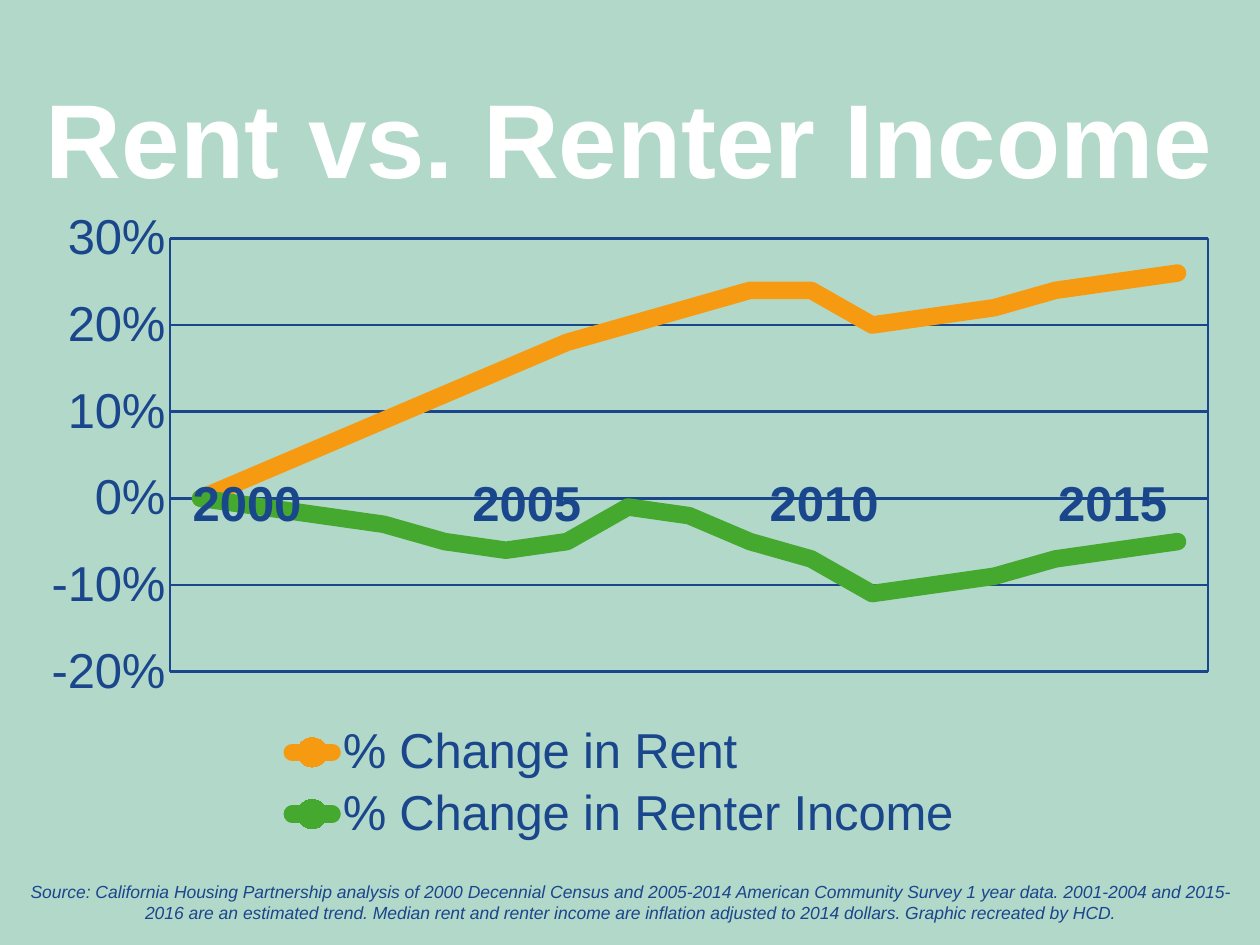
from lxml.etree import SubElement as Sub
from pptx import Presentation
from pptx.chart.data import CategoryChartData as Data
from pptx.dml.color import RGBColor as Rgb
from pptx.enum.chart import XL_CHART_TYPE as Kind, XL_LEGEND_POSITION as Spot
from pptx.enum.chart import XL_MARKER_STYLE as Mark, XL_TICK_MARK as Tick
from pptx.enum.text import MSO_ANCHOR as Anchor, MSO_AUTO_SIZE as Auto, PP_ALIGN as Align
from pptx.oxml import parse_xml
from pptx.oxml.ns import nsdecls, qn
from pptx.util import Inches, Pt

HUES = {"back": "B2D8CA", "navy": "1A468C", "rent": "F69B11",
        "pay": "44A92E", "white": "FFFFFF"}
RENT = [0, .03, .06, .09, .12, .15, .18, .2, .22, .24, .24, .2, .21, .22, .24, .25, .26]
PAY = [0, -.01, -.02, -.03, -.05, -.06, -.05, -.01, -.02, -.05, -.07, -.11, -.1,
       -.09, -.07, -.06, -.05]
LINES = [("% Change in Rent", RENT, "rent"), ("% Change in Renter Income", PAY, "pay")]
YEARS = {"2000": 1.43, "2005": 3.65, "2010": 6.01, "2015": 8.3}
NOTE = ("Source: California Housing Partnership analysis of 2000 Decennial Census and "
        "2005-2014 American Community Survey 1 year data. 2001-2004 and 2015-2016 are an "
        "estimated trend. Median rent and renter income are inflation adjusted to 2014 "
        "dollars. Graphic recreated by HCD.")


def hue(name):
    return Rgb.from_string(HUES[name])


class Deck:
    face = "Arial"

    def __init__(self):
        self.file = Presentation()
        self.file.slide_width, self.file.slide_height = Inches(10), Inches(7.5)
        self.slide = self.file.slides.add_slide(self.file.slide_layouts[5])
        fill = self.slide.background.fill
        fill.solid()
        fill.fore_color.rgb = hue("back")

    def style(self, font, size, name="navy", bold=False, italic=False):
        font.name, font.size, font.bold, font.italic = self.face, Pt(size), bold, italic
        font.color.rgb = hue(name)

    def title(self, text, box):
        shape = self.slide.shapes.title
        shape.left, shape.top, shape.width, shape.height = map(Inches, box)
        frame = shape.text_frame
        frame.text = text
        frame.auto_size, frame.vertical_anchor = Auto.NONE, Anchor.TOP
        frame.margin_left = frame.margin_right = frame.margin_bottom = 0
        frame.margin_top = Inches(.08)
        para = frame.paragraphs[0]
        para.alignment = Align.CENTER
        self.style(para.font, 60, "white", bold=True)

    def label(self, text, box, wrap):
        frame = self.slide.shapes.add_textbox(*map(Inches, box)).text_frame
        frame.text = text
        frame.word_wrap, frame.auto_size = wrap, Auto.SHAPE_TO_FIT_TEXT
        return frame.paragraphs[0]

    def note(self, text, box):
        para = self.label(text, box, True)
        para.alignment = Align.CENTER
        self.style(para.font, 10, italic=True)

    def year(self, text, box):
        run = self.label(text, box, False).runs[0]
        self.style(run.font, 28, bold=True)
        edge = parse_xml(f'<a:ln {nsdecls("a")} w="{Pt(1.5)}"><a:solidFill>'
                         f'<a:srgbClr val="{HUES["white"]}"/></a:solidFill></a:ln>')
        run._r.get_or_add_rPr().insert(0, edge)

    def place(self, part, box, inner=False):
        for old in part.findall(qn("c:layout")):
            part.remove(old)
        lay = parse_xml(f'<c:layout {nsdecls("c")}/>')
        spot = Sub(lay, qn("c:manualLayout"))
        if inner:
            Sub(spot, qn("c:layoutTarget"), val="inner")
        for key in "xy":
            Sub(spot, qn(f"c:{key}Mode"), val="edge")
        for key, val in zip("xywh", box):
            Sub(spot, qn(f"c:{key}"), val=str(val))
        part.insert(0 if inner else 1, lay)

    def frame(self, plot):
        plot.append(parse_xml(
            f'<c:spPr {nsdecls("c", "a")}><a:noFill/><a:ln w="{Pt(.75)}"><a:solidFill>'
            f'<a:srgbClr val="{HUES["navy"]}"/></a:solidFill></a:ln></c:spPr>'))

    def chart(self, lines, box):
        data = Data(number_format="0%")
        data.categories = [str(n) for n in range(1, len(lines[0][1]) + 1)]
        for name, vals, _ in lines:
            data.add_series(name, vals)
        chart = self.slide.shapes.add_chart(
            Kind.LINE_MARKERS, *map(Inches, box), data).chart
        chart.has_title = False
        self.style(chart.font, 10, "rent")
        chart.plots[0].vary_by_categories = False
        for row, (_, _, name) in zip(chart.plots[0].series, lines):
            row.smooth = False
            line = row.format.line
            line.width, line.color.rgb = Pt(10), hue(name)
            row._element.spPr.find(qn("a:ln")).set("cap", "rnd")
            row.marker.style, row.marker.size = Mark.CIRCLE, 5
            look = row.marker.format
            look.fill.solid()
            look.fill.fore_color.rgb = look.line.color.rgb = hue(name)
        chart.category_axis.visible = False
        axis = chart.value_axis
        axis.minimum_scale, axis.maximum_scale, axis.major_unit = -.2, .3, .1
        axis.major_tick_mark = axis.minor_tick_mark = Tick.NONE
        axis.format.line.fill.background()
        grid = axis.major_gridlines.format.line
        grid.width, grid.color.rgb = Pt(1.5), hue("navy")
        ticks = axis.tick_labels
        ticks.number_format, ticks.number_format_is_linked = "0%", False
        self.style(ticks.font, 28)
        chart.has_legend = True
        key = chart.legend
        key.position, key.include_in_layout = Spot.BOTTOM, False
        self.style(key.font, 28)
        plot = chart._chartSpace.chart.plotArea
        self.place(plot, (.12, .06, .86, .66), inner=True)
        self.place(key._element, (.21, .79, .57, .2))
        self.frame(plot)


def main():
    deck = Deck()
    deck.title("Rent vs. Renter Income", (.34, .5, 9.31, 6.29))
    deck.chart(LINES, (.2, 1.58, 9.58, 5.21))
    deck.note(NOTE, (0, 6.94, 10, .44))
    for text, left in YEARS.items():
        deck.year(text, (left, 3.7, 1.08, .57))
    deck.file.save("out.pptx")


if __name__ == "__main__":
    main()
